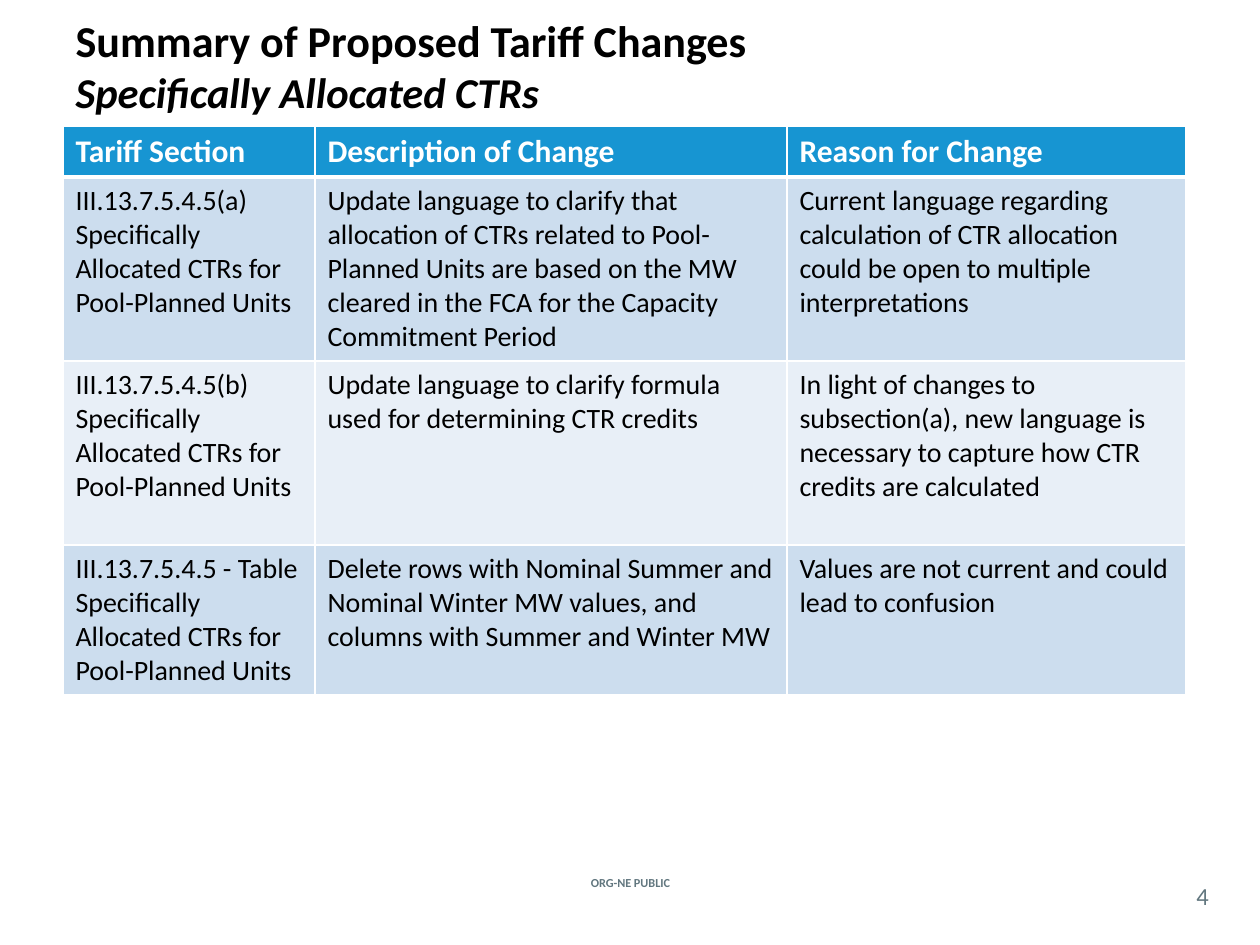
"""Build the slide that sums up the proposed tariff changes."""
from lxml.etree import SubElement
from pptx import Presentation
from pptx.dml.color import RGBColor
from pptx.enum.text import MSO_ANCHOR, MSO_AUTO_SIZE, PP_ALIGN
from pptx.oxml.ns import qn
from pptx.util import Pt

BLACK = RGBColor(0x00, 0x00, 0x00)
WHITE = RGBColor(0xFF, 0xFF, 0xFF)
GREY = RGBColor(0x62, 0x77, 0x7F)
BLUE = RGBColor(0x17, 0x95, 0xD2)
PALE = RGBColor(0xCC, 0xDD, 0xEE)
LIGHT = RGBColor(0xE8, 0xEF, 0xF7)
SCALE = 914400 / 126


def px(*sizes):
    return [round(size * SCALE) for size in sizes]


def write(para, text, size, color, **look):
    run = para.add_run()
    run.text = text
    look = {"name": "Calibri", "size": Pt(size), "bold": False, **look}
    for key, value in look.items():
        setattr(run.font, key, value)
    run.font.color.rgb = color


deck = Presentation()
deck.slide_width, deck.slide_height = px(1260, 945)
slide = deck.slides.add_slide(deck.slide_layouts[5])

title = slide.shapes.title
title.left, title.top, title.width, title.height = px(63, 10, 1134, 158)
frame = title.text_frame
format = {
    "word_wrap": True,
    "auto_size": MSO_AUTO_SIZE.NONE,
    "vertical_anchor": MSO_ANCHOR.TOP,
    "margin_top": px(3)[0],
}
for key, value in format.items():
    setattr(frame, key, value)
para = frame.paragraphs[0]
para.alignment = PP_ALIGN.LEFT
write(para, "Summary of Proposed Tariff Changes", 25.2, BLACK, bold=True)
para.add_line_break()
write(para, "Specifically Allocated CTRs", 24.3, BLACK, bold=True, italic=True)

UNITS = "Specifically Allocated CTRs for Pool-Planned Units"
ROWS = [
    ("Tariff Section", "Description of Change", "Reason for Change"),
    (
        f"III.13.7.5.4.5(a)\n{UNITS}",
        "Update language to clarify that allocation of CTRs related to Pool-Planned "
        "Units are based on the MW cleared in the FCA for the Capacity Commitment Period",
        "Current language regarding calculation of CTR allocation could be open to "
        "multiple interpretations",
    ),
    (
        f"III.13.7.5.4.5(b)\n{UNITS}",
        "Update language to clarify formula used for determining CTR credits",
        "In light of changes to subsection(a), new language is necessary to capture "
        "how CTR credits are calculated",
    ),
    (
        f"III.13.7.5.4.5 - Table\n{UNITS}",
        "Delete rows with Nominal Summer and Nominal Winter MW values, and columns "
        "with Summer and Winter MW",
        "Values are not current and could lead to confusion",
    ),
]
WIDTHS = px(252, 472, 399)
HEIGHTS = px(51, 184, 184, 150)
FILLS = [BLUE, PALE, LIGHT, PALE]

table = slide.shapes.add_table(
    len(ROWS), len(WIDTHS), *px(63, 126), sum(WIDTHS), sum(HEIGHTS)
).table
for col, width in zip(table.columns, WIDTHS):
    col.width = width
for row, (texts, height, fill) in enumerate(zip(ROWS, HEIGHTS, FILLS)):
    table.rows[row].height = height
    head = row == 0
    for col, text in enumerate(texts):
        cell = table.cell(row, col)
        props = cell._tc.get_or_add_tcPr()
        for side in "LRTB":
            thick = (head and side == "B") or (row == 1 and side == "T")
            line = SubElement(props, qn(f"a:ln{side}"), w=str(Pt(3 if thick else 1)))
            paint = SubElement(line, qn("a:solidFill"))
            SubElement(paint, qn("a:srgbClr"), val=str(WHITE))
        cell.fill.solid()
        cell.fill.fore_color.rgb = fill
        for spot, part in enumerate(text.split("\n")):
            frame = cell.text_frame
            para = frame.add_paragraph() if spot else frame.paragraphs[0]
            write(para, part, 18 if head else 16, WHITE if head else BLACK, bold=head)

NOTES = [
    ("ORG-NE PUBLIC", (538, 872, 185, 21), 7, True),
    ("4", (1176, 877, 53, 37), 14, False),
]
for text, place, size, bold in NOTES:
    frame = slide.shapes.add_textbox(*px(*place)).text_frame
    frame.word_wrap = True
    frame.vertical_anchor = MSO_ANCHOR.MIDDLE
    for side in ("left", "top", "right", "bottom"):
        setattr(frame, f"margin_{side}", 0)
    para = frame.paragraphs[0]
    para.alignment = PP_ALIGN.CENTER
    write(para, text, size, GREY, bold=bold)

deck.save("out.pptx")
